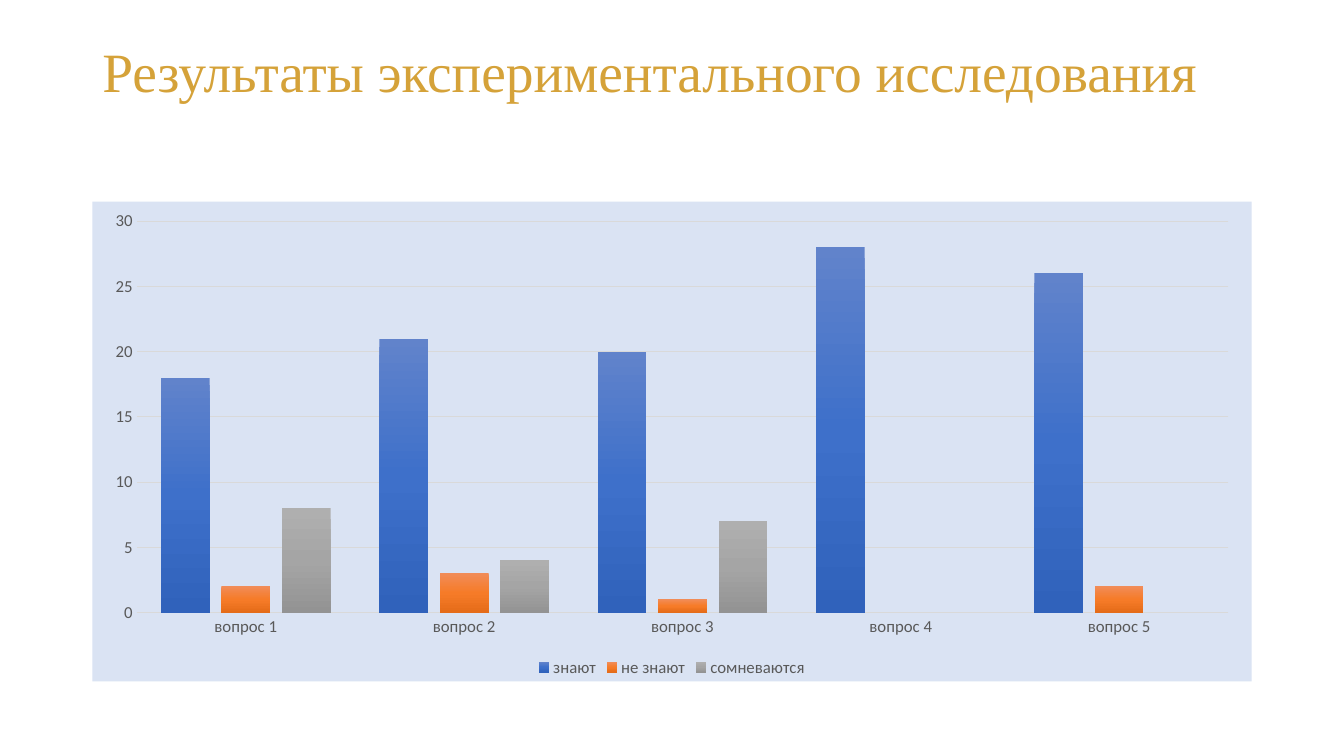
from pptx import Presentation
from pptx.chart.data import CategoryChartData
from pptx.dml.color import RGBColor
from pptx.enum.chart import XL_CHART_TYPE, XL_LEGEND_POSITION, XL_TICK_MARK
from pptx.enum.text import MSO_ANCHOR, PP_ALIGN
from pptx.oxml import parse_xml
from pptx.oxml.ns import nsdecls
from pptx.util import Cm, Pt

QUESTIONS = [f"вопрос {number}" for number in range(1, 6)]
ANSWERS = [
    ("знают", (18, 21, 20, 28, 26), ("6183CB", "3E70CA", "3062BB")),
    ("не знают", (2, 3, 1, 0, 2), ("F18C57", "F67B28", "E56C19")),
    ("сомневаются", (8, 4, 7, 0, 0), ("AFAFAF", "A5A5A5", "939393")),
]
GRID_COLOR = "D9D9D9"
LABEL_COLOR = "595959"


def color(hex_string):
    return RGBColor.from_string(hex_string)


def style_font(font, name, size, hex_string):
    font.name = name
    font.size = Pt(size)
    font.color.rgb = color(hex_string)


def style_line(line, hex_string, width):
    line.color.rgb = color(hex_string)
    line.width = Pt(width)


def fill_series_gradient(series, stops):
    """Shade the columns from top to bottom with evenly spaced stops."""
    step = 100000 // (len(stops) - 1)
    stop_xml = "".join(
        f'<a:gs pos="{index * step}"><a:srgbClr val="{stop}"/></a:gs>'
        for index, stop in enumerate(stops)
    )
    series._element.get_or_add_spPr().append(parse_xml(
        f'<a:gradFill {nsdecls("a")} rotWithShape="1"><a:gsLst>{stop_xml}</a:gsLst>'
        '<a:lin ang="5400000" scaled="0"/></a:gradFill>'
    ))


def fill_chart_area(chart, hex_string):
    chart._chartSpace.chart.addnext(parse_xml(
        f'<c:spPr {nsdecls("c", "a")}><a:solidFill><a:srgbClr val="{hex_string}"/>'
        '</a:solidFill><a:ln><a:noFill/></a:ln></c:spPr>'
    ))


def add_title(slide, left, top, width, height):
    shape = slide.shapes.add_textbox(left, top, width, height)
    text_frame = shape.text_frame
    text_frame.word_wrap = True
    text_frame.vertical_anchor = MSO_ANCHOR.MIDDLE
    text_frame.text = "Результаты экспериментального исследования"
    paragraph = text_frame.paragraphs[0]
    paragraph.alignment = PP_ALIGN.LEFT
    paragraph.line_spacing = 0.9
    style_font(paragraph.runs[0].font, "Times New Roman", 39.6, "D5A239")


def style_axes(chart):
    for axis in (chart.category_axis, chart.value_axis):
        axis.major_tick_mark = XL_TICK_MARK.NONE
        axis.minor_tick_mark = XL_TICK_MARK.NONE
        style_font(axis.tick_labels.font, "Calibri", 12, LABEL_COLOR)
    style_line(chart.category_axis.format.line, GRID_COLOR, 1)

    value_axis = chart.value_axis
    value_axis.minimum_scale = 0
    value_axis.maximum_scale = 30
    value_axis.major_unit = 5
    value_axis.format.line.fill.background()
    value_axis.has_major_gridlines = True
    style_line(value_axis.major_gridlines.format.line, GRID_COLOR, 0.75)


def add_answers_chart(slide, left, top, width, height):
    chart_data = CategoryChartData()
    chart_data.categories = QUESTIONS
    for name, values, _ in ANSWERS:
        chart_data.add_series(name, values)
    chart = slide.shapes.add_chart(
        XL_CHART_TYPE.COLUMN_CLUSTERED, left, top, width, height, chart_data
    ).chart
    chart.has_title = False
    style_font(chart.font, "Calibri", 10, "000000")
    fill_chart_area(chart, "DAE3F3")

    plot = chart.plots[0]
    plot.vary_by_categories = False
    plot.gap_width = 100
    plot.overlap = -24
    for series, (_, _, stops) in zip(plot.series, ANSWERS):
        fill_series_gradient(series, stops)
    style_axes(chart)

    chart.has_legend = True
    chart.legend.position = XL_LEGEND_POSITION.BOTTOM
    chart.legend.include_in_layout = False
    style_font(chart.legend.font, "Calibri", 12, LABEL_COLOR)


def main():
    presentation = Presentation()
    presentation.slide_width = Cm(33.87)
    presentation.slide_height = Cm(19.05)
    slide = presentation.slides.add_slide(presentation.slide_layouts[6])

    margin = Cm(2.33)
    content_width = presentation.slide_width - 2 * margin
    add_title(slide, margin, Cm(1.14), content_width, Cm(1.47))
    add_answers_chart(slide, margin, Cm(5.08), content_width, Cm(12.09))
    presentation.save("out.pptx")


if __name__ == "__main__":
    main()
